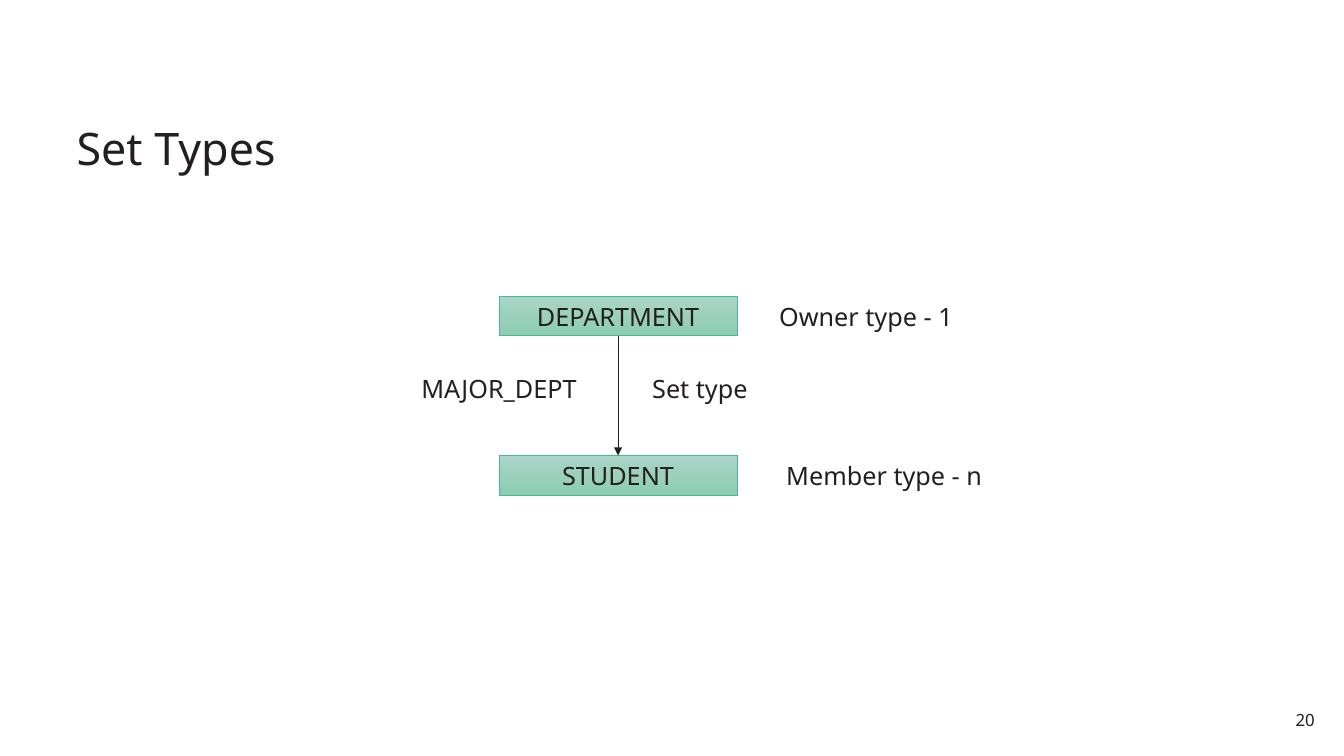
from copy import deepcopy

from lxml import etree
from pptx import Presentation
from pptx.dml.color import RGBColor
from pptx.enum.shapes import MSO_CONNECTOR, MSO_SHAPE
from pptx.enum.text import MSO_ANCHOR, MSO_AUTO_SIZE, PP_ALIGN
from pptx.oxml.ns import qn
from pptx.util import Inches, Pt

RECTANGLE = MSO_SHAPE.RECTANGLE
STRAIGHT = MSO_CONNECTOR.STRAIGHT
TOP, MIDDLE, BOTTOM = MSO_ANCHOR.TOP, MSO_ANCHOR.MIDDLE, MSO_ANCHOR.BOTTOM
LEFT, CENTER, RIGHT = PP_ALIGN.LEFT, PP_ALIGN.CENTER, PP_ALIGN.RIGHT
GROW = MSO_AUTO_SIZE.SHAPE_TO_FIT_TEXT

FONT = "Noto Sans"
COLORS = {
    "text": "231F20",
    "border": "4BB693",
    "gradient_top": "AAD7C5",
    "gradient_middle": "9CD0BC",
    "gradient_bottom": "8ACDB3",
}
SLIDE_WIDTH, SLIDE_HEIGHT = 13.33, 7.5
RECORD_WIDTH, RECORD_HEIGHT = 2.36, 0.39
LABEL_HEIGHT = 0.4


def color(name):
    """Return the named colour."""
    return RGBColor.from_string(COLORS[name])


def write_text(shape, text, size=18, align=LEFT, anchor=TOP, wrap=False,
               spacing=1.0, insets=(0.1, 0.05)):
    """Fill a shape with one formatted paragraph."""
    frame = shape.text_frame
    frame.word_wrap = wrap
    frame.vertical_anchor = anchor
    frame.margin_left = frame.margin_right = Inches(insets[0])
    frame.margin_top = frame.margin_bottom = Inches(insets[1])
    paragraph = frame.paragraphs[0]
    paragraph.alignment = align
    paragraph.line_spacing = spacing
    run = paragraph.add_run()
    run.text = text
    run.font.name = FONT
    run.font.size = Pt(size)
    run.font.color.rgb = color("text")


def add_text(slide, box, text, **text_format):
    """Add a text box at the given left, top, width and height."""
    shape = slide.shapes.add_textbox(*map(Inches, box))
    write_text(shape, text, **text_format)
    return shape


def add_label(slide, left, top, width, text):
    """Add a one-line label that grows with its text."""
    shape = add_text(slide, (left, top, width, LABEL_HEIGHT), text)
    shape.text_frame.auto_size = GROW


def fill_gradient(shape):
    """Give a shape the vertical three-stop green gradient."""
    shape.fill.gradient()
    shape.fill.gradient_angle = 270
    stop_list = shape._element.spPr.find(".//" + qn("a:gsLst"))
    middle_stop = deepcopy(stop_list[0])
    middle_stop.set("pos", "50000")
    stop_list.insert(1, middle_stop)
    names = ("gradient_top", "gradient_middle", "gradient_bottom")
    for stop, name in zip(shape.fill.gradient_stops, names):
        stop.color.rgb = color(name)


def add_record(slide, left, top, text):
    """Add a record type rectangle."""
    box = (left, top, RECORD_WIDTH, RECORD_HEIGHT)
    shape = slide.shapes.add_shape(RECTANGLE, *map(Inches, box))
    shape.shadow.inherit = False
    fill_gradient(shape)
    shape.line.color.rgb = color("border")
    shape.line.width = Pt(0.5)
    write_text(shape, text, align=CENTER, anchor=MIDDLE)
    return shape


def add_arrow(slide, owner, member):
    """Join the owner's bottom to the member's top with an arrow."""
    connector = slide.shapes.add_connector(STRAIGHT, 0, 0, 0, 0)
    connector.begin_connect(owner, 2)
    connector.end_connect(member, 0)
    connector.line.color.rgb = color("text")
    connector.line.width = Pt(0.75)
    properties = connector._element.spPr
    etree.SubElement(connector.line._get_or_add_ln(), qn("a:tailEnd"), type="triangle")
    etree.SubElement(properties, qn("a:effectLst"))


def add_set_diagram(slide, left, top, row_gap):
    """Draw the owner and member records, their link and the labels."""
    record_left = left + 0.87
    member_top = top + row_gap
    owner = add_record(slide, record_left, top, "DEPARTMENT")
    member = add_record(slide, record_left, member_top, "STUDENT")
    add_arrow(slide, owner, member)
    record_right = record_left + RECORD_WIDTH
    center = record_left + RECORD_WIDTH / 2
    link_top = top + row_gap * 0.45
    add_label(slide, record_right + 0.32, top, 2, "Owner type - 1")
    add_label(slide, record_right + 0.39, member_top, 2.2, "Member type - n")
    add_label(slide, center + 0.24, link_top, 1.18, "Set type")
    add_label(slide, left, link_top, 1.78, "MAJOR_DEPT")


def main():
    """Build and save the slide."""
    presentation = Presentation()
    presentation.slide_width = Inches(SLIDE_WIDTH)
    presentation.slide_height = Inches(SLIDE_HEIGHT)
    slide = presentation.slides.add_slide(presentation.slide_layouts[6])
    add_text(slide, (0.68, 0.76, 11.97, 1.02), "Set Types", size=32,
             anchor=BOTTOM, wrap=True, spacing=0.9, insets=(0.08, 0.04))
    add_text(slide, (12.65, 6.98, 0.47, 0.31), "20", size=12, align=RIGHT,
             wrap=True, insets=(0.08, 0.06))
    add_set_diagram(slide, 4.08, 2.94, 1.58)
    presentation.save("out.pptx")


if __name__ == "__main__":
    main()
